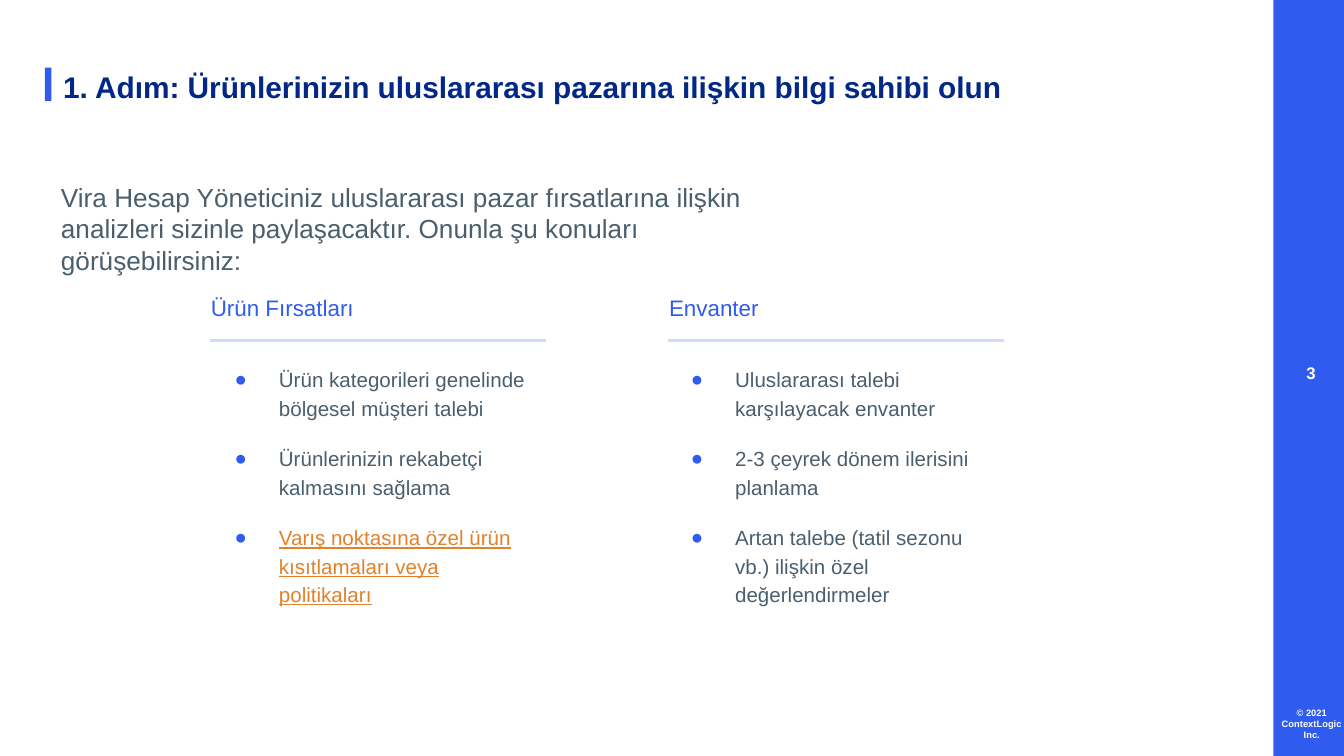
"""Build the slide on product opportunities and inventory for international markets."""
from dataclasses import dataclass

from lxml import etree
from pptx import Presentation
from pptx import util as u
from pptx.dml.color import RGBColor
from pptx.enum import shapes, text
from pptx.oxml import ns

CELL = 0.1
COLUMNS, ROWS = 100, 56.25


@dataclass(frozen=True)
class Theme:
    """Colours and type sizes of the slide."""
    font: str = "Arial"
    accent: str = "305BEF"
    title: str = "022786"
    body: str = "4A5F6E"
    link: str = "E3812B"
    rule: str = "D0DBFF"
    light: str = "FFFFFF"
    title_size: int = 16
    intro_size: int = 14
    heading_size: int = 12
    bullet_size: int = 11
    number_size: int = 9
    notice_size: int = 5


THEME = Theme()


def cells(*counts):
    """Turn counts of grid cells into lengths."""
    return [u.Inches(count * CELL) for count in counts]


def add_block(page, *place):
    """Add a plain accent rectangle."""
    block = page.shapes.add_shape(shapes.MSO_SHAPE.RECTANGLE, *cells(*place))
    block.shadow.inherit = False
    block.fill.solid()
    block.fill.fore_color.rgb = RGBColor.from_string(THEME.accent)
    block.line.fill.background()


def add_rule(page, left, right, row):
    """Add a thin horizontal rule."""
    rule = page.shapes.add_connector(
        shapes.MSO_CONNECTOR.STRAIGHT, *cells(left, row, right, row))
    rule.line.color.rgb = RGBColor.from_string(THEME.rule)
    rule.line.width = u.Pt(1.5)
    etree.SubElement(rule._element.spPr, ns.qn("a:effectLst"))


def add_frame(page, place, insets=(1, 1, 1, 1)):
    """Add a wrapping text box and return its text frame."""
    frame = page.shapes.add_textbox(*cells(*place)).text_frame
    frame.word_wrap = True
    (frame.margin_left, frame.margin_top,
     frame.margin_right, frame.margin_bottom) = cells(*insets)
    return frame


def add_span(para, words, size, color, bold=False, underline=False):
    """Add one styled run to a paragraph."""
    span = para.add_run()
    span.text = words
    font = span.font
    font.name, font.size = THEME.font, u.Pt(size)
    font.bold, font.underline = bold, underline
    font.color.rgb = RGBColor.from_string(color)


def add_label(page, place, words, size, color, bold=False,
              align=text.PP_ALIGN.LEFT, insets=(1, 1, 1, 1)):
    """Add a text box of one paragraph and return its frame."""
    frame = add_frame(page, place, insets)
    para = frame.paragraphs[0]
    para.alignment = align
    add_span(para, words, size, color, bold)
    return frame


def set_bullet(para):
    """Give a paragraph a hanging accent bullet."""
    props = para._p.get_or_add_pPr()
    props.set("marL", str(u.Inches(0.5)))
    props.set("indent", str(u.Inches(-0.33)))
    color = etree.SubElement(props, ns.qn("a:buClr"))
    etree.SubElement(color, ns.qn("a:srgbClr"), val=THEME.accent)
    etree.SubElement(props, ns.qn("a:buFont"), typeface=THEME.font)
    etree.SubElement(props, ns.qn("a:buChar"), char="●")


def add_bullets(page, place, items, linked):
    """Add a bullet list, with the item at index linked styled as a link."""
    frame = add_frame(page, place, (0, 0, 1, 1))
    for index, item in enumerate(items):
        para = frame.add_paragraph() if index else frame.paragraphs[0]
        set_bullet(para)
        para.line_spacing = 1.15
        if index:
            para.space_before = u.Pt(12)
        is_link = index == linked
        add_span(para, item, THEME.bullet_size,
                 THEME.link if is_link else THEME.body, underline=is_link)
    para.space_after = u.Pt(12)


def add_topic(page, left, list_left, list_width, heading, items, linked=None):
    """Add a heading, its rule and its bullet list."""
    add_label(page, (left - 0.9, 20.9, 30.1, 4.4), heading,
              THEME.heading_size, THEME.accent)
    add_rule(page, left, left + 25, 25.35)
    add_bullets(page, (list_left, 27.05, list_width, 19.5), items, linked)


def add_sidebar(page):
    """Add the side band with page number and copyright notice."""
    add_block(page, 94.75, 0, COLUMNS - 94.75, ROWS)
    for place, words, size in (
            ((94.95, 26.2, 5.2, 4.3), "3", THEME.number_size),
            ((94.2, 51.6, 6.8, 4.7), "© 2021 ContextLogic Inc.", THEME.notice_size)):
        add_label(page, place, words, size, THEME.light, True, text.PP_ALIGN.CENTER)


def main():
    """Build and save the deck."""
    deck = Presentation()
    deck.slide_width, deck.slide_height = cells(COLUMNS, ROWS)
    page = deck.slides.add_slide(deck.slide_layouts[6])
    add_block(page, 3.33, 5.03, 0.5, 2.5)
    add_sidebar(page)
    add_label(page, (4.7, 4.6, 89.9, 3.4),
              "1. Adım: Ürünlerinizin uluslararası pazarına ilişkin bilgi sahibi olun",
              THEME.title_size, THEME.title, True, insets=(0, 0.5, 0, 0))
    intro = add_label(
        page, (4.54, 12.5, 54.3, 6.7),
        "Vira Hesap Yöneticiniz uluslararası pazar fırsatlarına ilişkin analizleri "
        "sizinle paylaşacaktır. Onunla şu konuları görüşebilirsiniz:",
        THEME.intro_size, THEME.body, insets=(0, 1, 1, 1))
    intro.auto_size = text.MSO_AUTO_SIZE.SHAPE_TO_FIT_TEXT
    add_topic(page, 15.6, 15.75, 24.8, "Ürün Fırsatları", (
        "Ürün kategorileri genelinde bölgesel müşteri talebi",
        "Ürünlerinizin rekabetçi kalmasını sağlama",
        "Varış noktasına özel ürün kısıtlamaları veya politikaları"), linked=2)
    add_topic(page, 49.7, 49.7, 25.7, "Envanter", (
        "Uluslararası talebi karşılayacak envanter",
        "2-3 çeyrek dönem ilerisini planlama",
        "Artan talebe (tatil sezonu vb.) ilişkin özel değerlendirmeler"))
    deck.save("out.pptx")


if __name__ == "__main__":
    main()
